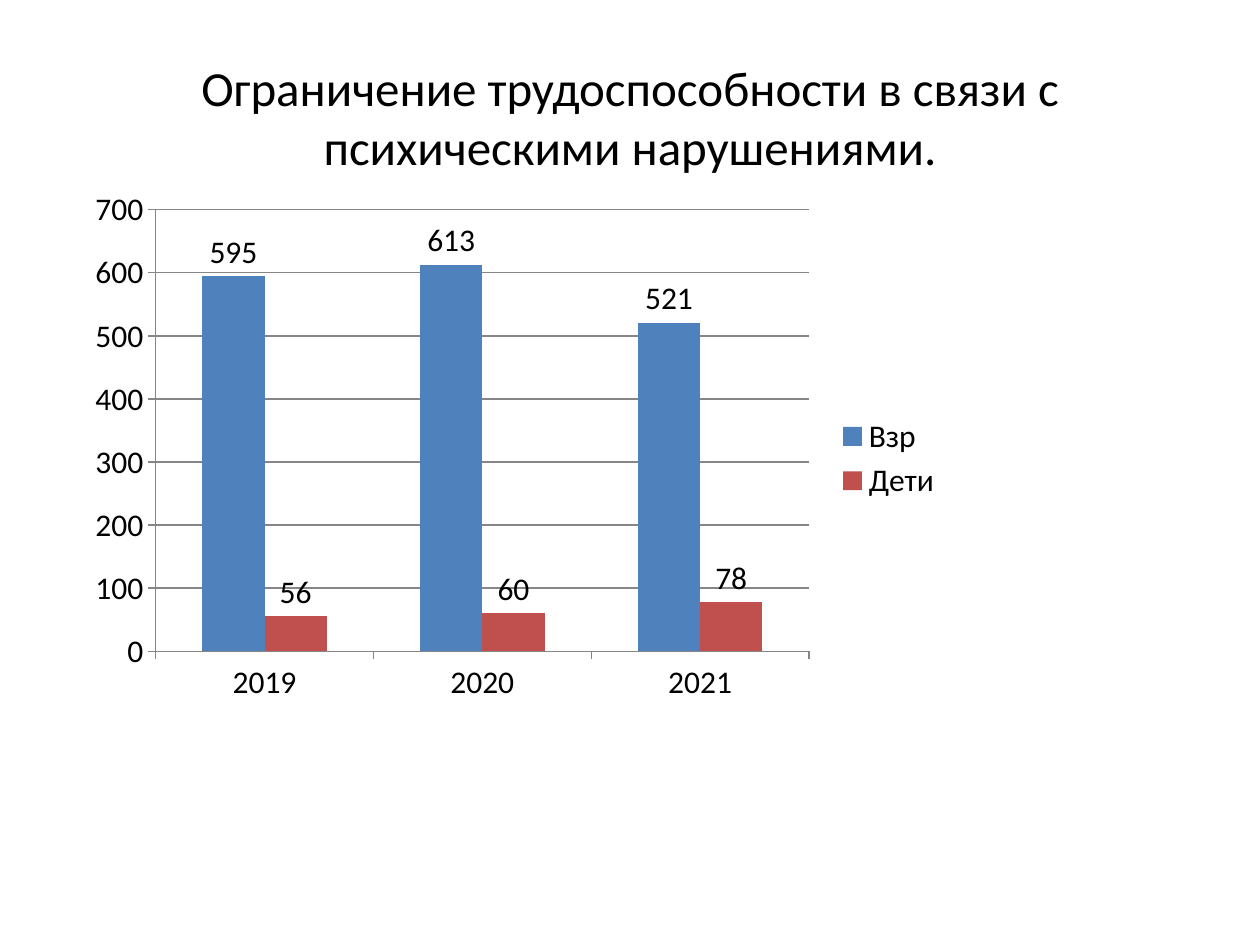
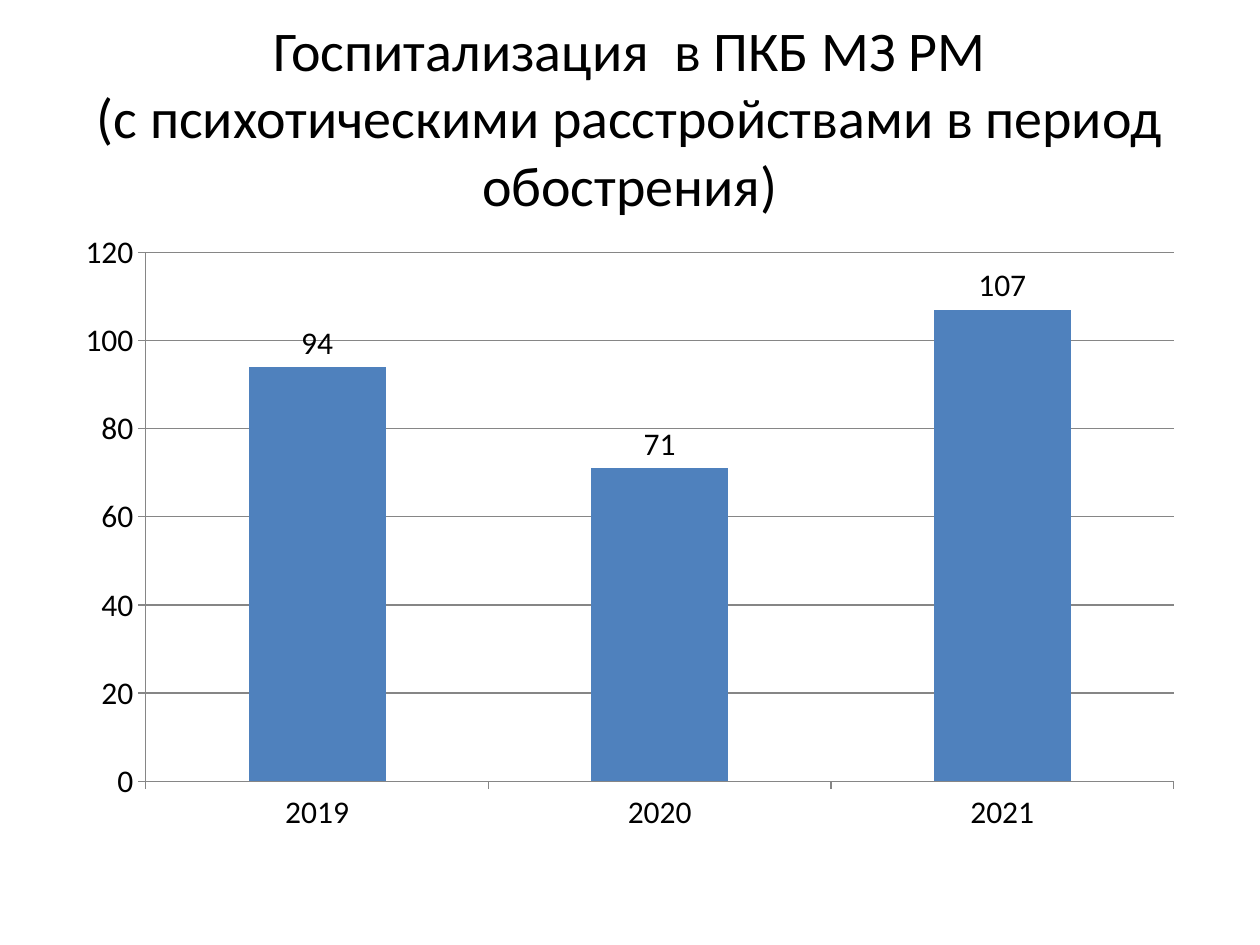
from lxml.etree import SubElement
from pptx import Presentation
from pptx.chart.data import CategoryChartData
from pptx.dml.color import RGBColor
from pptx.enum.chart import XL_CHART_TYPE, XL_LABEL_POSITION, XL_LEGEND_POSITION, XL_TICK_MARK
from pptx.enum.text import MSO_ANCHOR, MSO_AUTO_SIZE, PP_ALIGN
from pptx.oxml.ns import qn
from pptx.util import Cm, Pt

FONT = "Calibri"
BLACK, GRAY = "000000", "868686"
FILLS = ["4F81BD", "C0504D"]
YEARS = ["2019", "2020", "2021"]
HEAD = (1.27, 0.76, 22.86, 3.18)

SLIDES = [
    {
        "title": ["Ограничение трудоспособности в связи с психическими нарушениями."],
        "size": 28,
        "box": (1.47, 3.81, 17.78, 10.87),
        "plot": (1.67, 0.42, 13.17, 8.9),
        "data": {"Взр": (595, 613, 521), "Дети": (56, 60, 78)},
        "legend": True,
    },
    {
        "title": ["Госпитализация  в ПКБ МЗ РМ",
                  "(с психотическими расстройствами в период обострения)"],
        "size": 32,
        "box": (1.27, 4.45, 22.86, 12.57),
        "plot": (1.67, 0.64, 20.72, 10.66),
        "data": {"Series 1": (94, 71, 107)},
        "legend": False,
    },
]


def tint(color, code):
    color.rgb = RGBColor.from_string(code)


def style(font, size):
    font.name, font.size = FONT, Pt(size)
    tint(font.color, BLACK)


def rule(line):
    line.width = Pt(0.75)
    tint(line.color, GRAY)


def add_title(slide, lines, size):
    head = slide.shapes.title
    head.left, head.top, head.width, head.height = map(Cm, HEAD)
    frame = head.text_frame
    frame.auto_size = MSO_AUTO_SIZE.NONE
    frame.vertical_anchor = MSO_ANCHOR.MIDDLE
    para = frame.paragraphs[0]
    para.alignment = PP_ALIGN.CENTER
    for i, line in enumerate(lines):
        if i:
            para.add_line_break()
        run = para.add_run()
        run.text = line
        style(run.font, size)


def set_plot(chart, plot, box):
    """Fix the inner plot area, given in cm from the chart's corner."""
    area = chart.element.find(".//" + qn("c:plotArea"))
    for old in area.findall(qn("c:layout")):
        area.remove(old)
    layout = SubElement(area, qn("c:layout"))
    area.insert(0, layout)
    manual = SubElement(layout, qn("c:manualLayout"))
    parts = [("layoutTarget", "inner"), ("xMode", "edge"), ("yMode", "edge")]
    parts += [(key, str(part / whole)) for key, part, whole in zip("xywh", plot, box[2:] * 2)]
    for key, val in parts:
        SubElement(manual, qn("c:" + key)).set("val", val)


def add_bars(slide, item):
    data = CategoryChartData()
    data.categories = YEARS
    for name, vals in item["data"].items():
        data.add_series(name, vals)
    chart = slide.shapes.add_chart(
        XL_CHART_TYPE.COLUMN_CLUSTERED, *map(Cm, item["box"]), data).chart
    style(chart.font, 18)
    chart.has_title = False
    chart.has_legend = item["legend"]
    if item["legend"]:
        chart.legend.position = XL_LEGEND_POSITION.RIGHT
        chart.legend.include_in_layout = False
    for axis in (chart.category_axis, chart.value_axis):
        axis.major_tick_mark = XL_TICK_MARK.OUTSIDE
        axis.minor_tick_mark = XL_TICK_MARK.NONE
        rule(axis.format.line)
    rule(chart.value_axis.major_gridlines.format.line)
    bars = chart.plots[0]
    bars.gap_width, bars.overlap = 150, 0
    bars.vary_by_categories = False
    for series, fill in zip(bars.series, FILLS):
        series.format.fill.solid()
        tint(series.format.fill.fore_color, fill)
        labels = series.data_labels
        labels.show_value = True
        labels.position = XL_LABEL_POSITION.OUTSIDE_END
        style(labels.font, 18)
    set_plot(chart, item["plot"], item["box"])


def main():
    deck = Presentation()
    deck.slide_width, deck.slide_height = Cm(25.4), Cm(19.05)
    for item in SLIDES:
        slide = deck.slides.add_slide(deck.slide_layouts[5])
        add_title(slide, item["title"], item["size"])
        add_bars(slide, item)
    deck.save("out.pptx")


if __name__ == "__main__":
    main()
